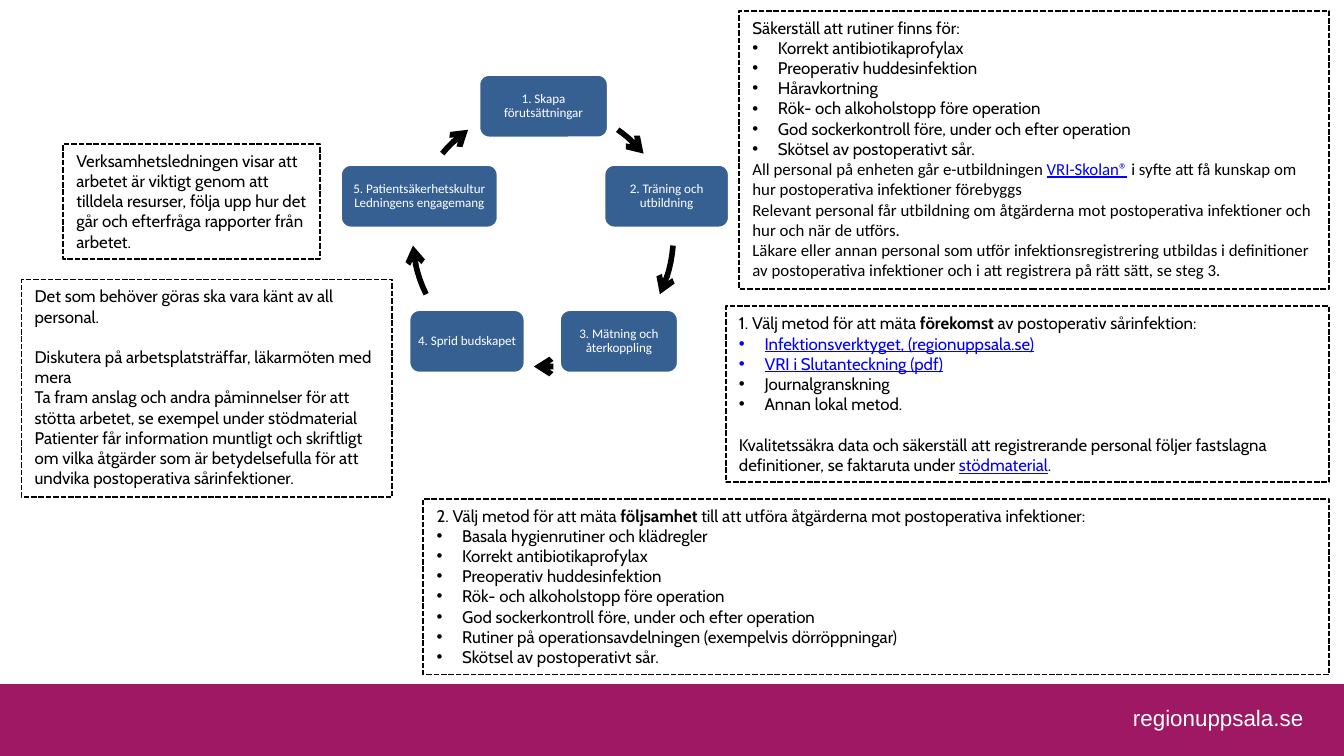
import math

from lxml import etree
from pptx import Presentation
from pptx.dml.color import RGBColor
from pptx.enum.dml import MSO_LINE
from pptx.enum.shapes import MSO_SHAPE
from pptx.enum.text import MSO_ANCHOR, PP_ALIGN
from pptx.oxml.ns import qn
from pptx.util import Inches, Pt

RECTANGLE, ROUNDED = MSO_SHAPE.RECTANGLE, MSO_SHAPE.ROUNDED_RECTANGLE
TOP, MIDDLE = MSO_ANCHOR.TOP, MSO_ANCHOR.MIDDLE
LEFT, CENTER = PP_ALIGN.LEFT, PP_ALIGN.CENTER
DASH = MSO_LINE.SQUARE_DOT

SLIDE_WIDTH = 10
SLIDE_HEIGHT = SLIDE_WIDTH * 9 / 16
BLACK, WHITE, BLUE, PLUM, LINK = "000000", "FFFFFF", "376092", "9E1863", "0000FF"
BULLET_INDENT = 0.19
SECTION_GAP = 10.8  # points, one text line

BOLD_STYLE = {"bold": True}
LINK_STYLE = {"color": LINK, "underline": True}
CALIBRI = {"font": "Calibri"}
BULLET = {"bullet": True}
SECTION = {"space_before": SECTION_GAP}


# A paragraph is (runs, format); a run is (text, format).
def plain(text, **style):
    return [(text, {})], style


def bullets(*texts):
    return [plain(text, **BULLET) for text in texts]


PREVENTION = ["Korrekt antibiotikaprofylax", "Preoperativ huddesinfektion"]
LIFESTYLE = ["Rök- och alkoholstopp före operation",
             "God sockerkontroll före, under och efter operation"]
WOUND_CARE = "Skötsel av postoperativt sår."

NOTES = [
    ((0.16, 2.08, 2.76, 1.62), [
        plain("Det som behöver göras ska vara känt av all personal."),
        plain("Diskutera på arbetsplatsträffar, läkarmöten med mera", **SECTION),
        plain("Ta fram anslag och andra påminnelser för att stötta arbetet, "
              "se exempel under stödmaterial"),
        plain("Patienter får information muntligt och skriftligt om vilka åtgärder "
              "som är betydelsefulla för att undvika postoperativa sårinfektioner."),
    ]),
    ((5.50, 0.08, 4.39, 2.07), [
        plain("Säkerställ att rutiner finns för:"),
        *bullets(*PREVENTION, "Håravkortning", *LIFESTYLE, WOUND_CARE),
        ([("All personal på enheten går e-utbildningen ", {}),
          ("VRI-Skolan®", LINK_STYLE),
          (" i syfte att få kunskap om hur postoperativa infektioner förebyggs", {})],
         CALIBRI),
        plain("Relevant personal får utbildning om åtgärderna mot postoperativa "
              "infektioner och hur och när de utförs.", **CALIBRI),
        plain("Läkare eller annan personal som utför infektionsregistrering utbildas i "
              "definitioner av postoperativa infektioner och i att registrera på rätt "
              "sätt, se steg 3.", **CALIBRI),
    ]),
    ((0.47, 1.07, 1.91, 0.86), [
        plain("Verksamhetsledningen visar att arbetet är viktigt genom att tilldela "
              "resurser, följa upp hur det går och efterfråga rapporter från arbetet."),
    ]),
    ((3.15, 3.71, 6.74, 1.31), [
        ([("2. Välj metod för att mäta ", {}), ("följsamhet", BOLD_STYLE),
          (" till att utföra åtgärderna mot postoperativa infektioner:", {})], {}),
        *bullets("Basala hygienrutiner och klädregler", *PREVENTION, *LIFESTYLE,
                 "Rutiner på operationsavdelningen (exempelvis dörröppningar)",
                 WOUND_CARE),
    ]),
    ((5.40, 2.28, 4.49, 1.31), [
        ([("1. Välj metod för att mäta ", {}), ("förekomst", BOLD_STYLE),
          (" av postoperativ sårinfektion:", {})], {}),
        ([("Infektionsverktyget, (regionuppsala.se)", LINK_STYLE)], BULLET),
        ([("VRI i Slutanteckning (pdf)", LINK_STYLE)], BULLET),
        *bullets("Journalgranskning", "Annan lokal metod."),
        ([("Kvalitetssäkra data och säkerställ att registrerande personal följer "
           "fastslagna definitioner, se faktaruta under ", {}),
          ("stödmaterial", LINK_STYLE), (".", {})], SECTION),
    ]),
]

# Step text, left, top, width
STEP_HEIGHT = 0.48
STEPS = [
    ("1. Skapa förutsättningar", 3.56, 0.55, 0.97),
    ("2. Träning och utbildning", 4.49, 1.22, 0.94),
    ("3. Mätning och återkoppling", 4.16, 2.30, 0.89),
    ("4. Sprid budskapet", 3.04, 2.30, 0.87),
    ("5. Patientsäkerhetskultur Ledningens engagemang", 2.53, 1.22, 1.18),
]

# Arrows on the cycle, in degrees clockwise from the top
CYCLE_CENTER, CYCLE_RADIUS = (4.04, 1.76), 0.97
ARROW_ANGLES = [(35, 50.5), (94, 116.3), (176, 184), (243.7, 266), (309.5, 325)]
ARROW_SEGMENTS = 6


def rgb(color):
    return RGBColor.from_string(color)


def add_box(slide, kind, at, fill=None, line=None, width=1, dash=None):
    shape = slide.shapes.add_shape(kind, *map(Inches, at))
    shape.shadow.inherit = False
    if fill:
        shape.fill.solid()
        shape.fill.fore_color.rgb = rgb(fill)
    else:
        shape.fill.background()
    if line:
        shape.line.color.rgb = rgb(line)
        shape.line.width = Pt(width)
        shape.line.dash_style = dash
    else:
        shape.line.fill.background()
    return shape


def add_run(paragraph, text, font="Cabin", size=9, color=BLACK, bold=False,
            underline=False):
    run = paragraph.add_run()
    run.text = text
    run.font.name, run.font.size = font, Pt(size)
    run.font.bold, run.font.underline = bold, underline
    run.font.color.rgb = rgb(color)


def set_text(shape, paragraphs, anchor=TOP, align=LEFT, margins=(0.1, 0.05),
             line_spacing=None, **run_format):
    frame = shape.text_frame
    frame.word_wrap = True
    frame.vertical_anchor = anchor
    frame.margin_left = frame.margin_right = Inches(margins[0])
    frame.margin_top = frame.margin_bottom = Inches(margins[1])
    for index, (runs, style) in enumerate(paragraphs):
        paragraph = frame.add_paragraph() if index else frame.paragraphs[0]
        style = dict(style)
        paragraph.alignment = align
        paragraph.line_spacing = line_spacing
        if "space_before" in style:
            paragraph.space_before = Pt(style.pop("space_before"))
        if style.pop("bullet", False):
            add_bullet(paragraph)
        for text, run_style in runs:
            add_run(paragraph, text, **{**run_format, **style, **run_style})


def add_bullet(paragraph):
    properties = paragraph._p.get_or_add_pPr()
    properties.set("marL", str(Inches(BULLET_INDENT)))
    properties.set("indent", str(-Inches(BULLET_INDENT)))
    etree.SubElement(properties, qn("a:buFont")).set("typeface", "Arial")
    etree.SubElement(properties, qn("a:buChar")).set("char", "•")


def add_cycle_arrow(slide, start, end):
    points = []
    for step in range(ARROW_SEGMENTS + 1):
        angle = math.radians(start + (end - start) * step / ARROW_SEGMENTS)
        points.append((Inches(CYCLE_CENTER[0] + CYCLE_RADIUS * math.sin(angle)),
                       Inches(CYCLE_CENTER[1] - CYCLE_RADIUS * math.cos(angle))))
    builder = slide.shapes.build_freeform(*points[0])
    builder.add_line_segments(points[1:], close=False)
    arrow = builder.convert_to_shape()
    arrow.shadow.inherit = False
    arrow.fill.background()
    arrow.line.color.rgb = rgb(BLACK)
    arrow.line.width = Pt(3)
    etree.SubElement(arrow.line._get_or_add_ln(), qn("a:tailEnd")).set("type", "arrow")


def main():
    presentation = Presentation()
    presentation.slide_width = Inches(SLIDE_WIDTH)
    presentation.slide_height = Inches(SLIDE_HEIGHT)
    slide = presentation.slides.add_slide(presentation.slide_layouts[6])

    add_box(slide, RECTANGLE, (0, 5.09, SLIDE_WIDTH, SLIDE_HEIGHT - 5.09), fill=PLUM)
    footer = slide.shapes.add_textbox(*map(Inches, (8.25, 5.09, 1.63, 0.5)))
    set_text(footer, [plain("regionuppsala.se")], anchor=MIDDLE, align=CENTER,
             font="Arial", size=12, color=WHITE)

    for at, paragraphs in NOTES:
        set_text(add_box(slide, RECTANGLE, at, line=BLACK, dash=DASH), paragraphs)

    for text, left, top, width in STEPS:
        at = (left, top, width, STEP_HEIGHT)
        step = add_box(slide, ROUNDED, at, fill=BLUE, line=WHITE, width=2)
        set_text(step, [plain(text)], anchor=MIDDLE, align=CENTER, margins=(0.03, 0.03),
                 line_spacing=0.9, font="Calibri", size=7, color=WHITE)
    for start, end in ARROW_ANGLES:
        add_cycle_arrow(slide, start, end)

    presentation.save("out.pptx")


if __name__ == "__main__":
    main()
